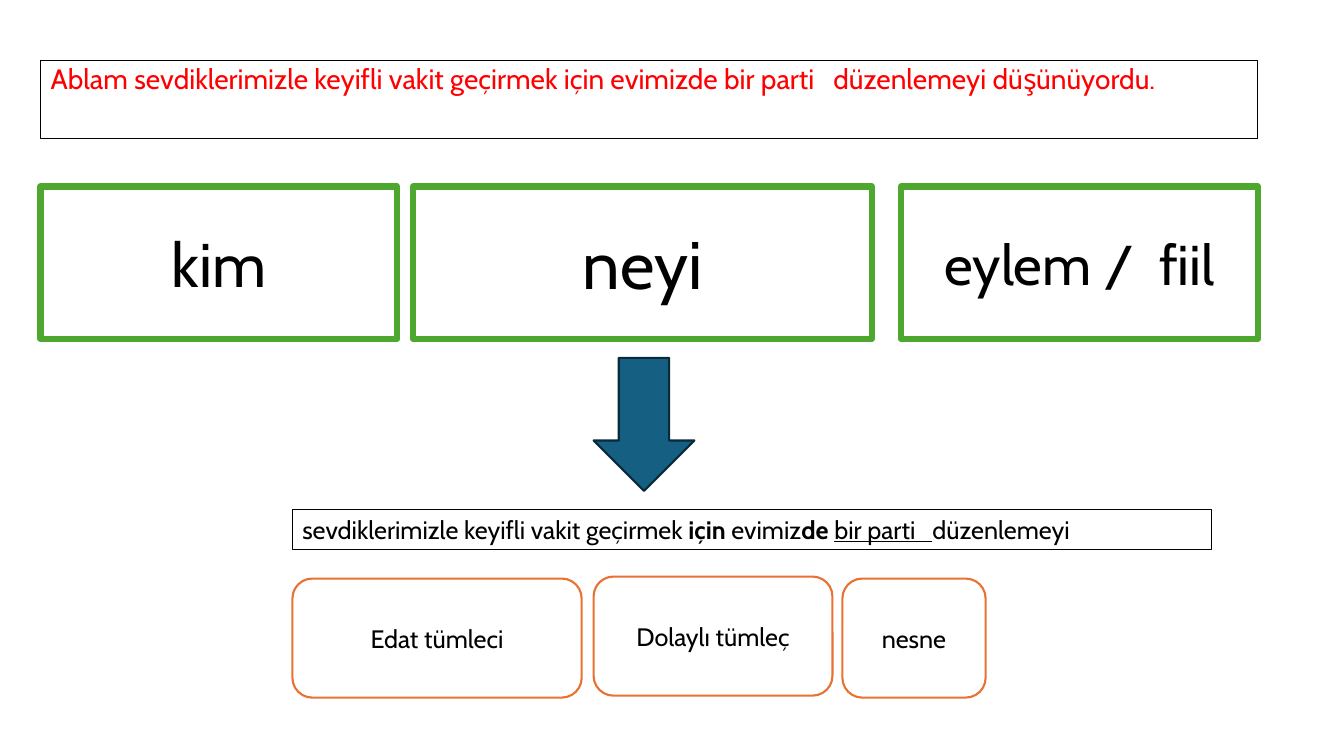
from lxml import etree
from pptx import Presentation
from pptx.dml.color import RGBColor
from pptx.enum import shapes, text
from pptx.oxml.ns import qn
from pptx.util import Cm, Pt

FONT = "Cabin"
COLORS = {
    "white": "FFFFFF", "black": "000000", "red": "FF0000", "green": "4EA72E",
    "orange": "E97132", "blue": "156082", "navy": "092A39",
}

SENTENCE = "Ablam sevdiklerimizle keyifli vakit geçirmek için evimizde bir parti   düzenlemeyi düşünüyordu. "
# text, left, width, font size
QUESTIONS = [
    ("kim", 1.02, 8.99, 44),
    ("neyi", 10.41, 11.56, 48),
    ("eylem /  fiil", 22.71, 8.99, 40),
]
# text, bold, underlined
PHRASE = [
    ("sevdiklerimizle keyifli vakit geçirmek ", False, False),
    ("için", True, False),
    (" evimiz", False, False),
    ("de ", True, False),
    ("bir parti   ", False, True),
    ("düzenlemeyi", False, False),
]
# text, left, top, width
ELEMENTS = [
    ("Edat tümleci", 7.37, 14.58, 7.29),
    ("Dolaylı tümleç", 14.96, 14.53, 6.02),
    ("nesne", 21.23, 14.58, 3.61),
]


def rgb(name):
    return RGBColor.from_string(COLORS[name])


def style_run(run, size, color="black"):
    run.font.name = FONT
    run.font.size = Pt(size)
    run.font.color.rgb = rgb(color)


def outline(shape, color, width):
    shape.line.color.rgb = rgb(color)
    shape.line.width = Pt(width)


def add_box(slide, kind, place, fill, line, width, label="", size=18):
    """Add a filled, outlined shape with a centred label; place is in cm."""
    box = slide.shapes.add_shape(kind, *map(Cm, place))
    box.shadow.inherit = False
    box.fill.solid()
    box.fill.fore_color.rgb = rgb(fill)
    outline(box, line, width)
    if label:
        frame = box.text_frame
        frame.text = label
        frame.vertical_anchor = text.MSO_ANCHOR.MIDDLE
        frame.paragraphs[0].alignment = text.PP_ALIGN.CENTER
        style_run(frame.paragraphs[0].runs[0], size)


def fill_sentence(body):
    body.left, body.top, body.width, body.height = map(Cm, (1.02, 1.52, 30.66, 1.96))
    outline(body, "black", 0.75)
    frame = body.text_frame
    frame.text = SENTENCE
    frame.auto_size = text.MSO_AUTO_SIZE.NONE
    frame.vertical_anchor = text.MSO_ANCHOR.TOP
    paragraph = frame.paragraphs[0]
    paragraph.alignment = text.PP_ALIGN.JUSTIFY
    paragraph.space_before = Pt(10)
    paragraph.line_spacing = 0.9
    properties = paragraph._p.get_or_add_pPr()
    properties.set("marL", str(Cm(0.64)))
    properties.set("indent", str(-Cm(0.64)))
    etree.SubElement(properties, qn("a:buNone"))
    style_run(paragraph.runs[0], 20, "red")


def add_phrase(slide):
    phrase = slide.shapes.add_textbox(*map(Cm, (7.37, 12.83, 23.16, 1.03)))
    outline(phrase, "black", 0.75)
    frame = phrase.text_frame
    frame.word_wrap = True
    frame.auto_size = text.MSO_AUTO_SIZE.SHAPE_TO_FIT_TEXT
    for words, bold, underlined in PHRASE:
        run = frame.paragraphs[0].add_run()
        run.text = words
        style_run(run, 18)
        run.font.bold = bold
        run.font.underline = underlined


def main():
    deck = Presentation()
    deck.slide_width, deck.slide_height = Cm(33.87), Cm(19.05)
    slide = deck.slides.add_slide(deck.slide_layouts[1])
    title = slide.shapes.title
    title.element.getparent().remove(title.element)

    fill_sentence(slide.placeholders[1])
    kinds = shapes.MSO_SHAPE
    for label, left, width, size in QUESTIONS:
        add_box(slide, kinds.RECTANGLE, (left, 4.7, width, 3.84),
                "white", "green", 4.5, label, size)
    add_phrase(slide)
    add_box(slide, kinds.DOWN_ARROW, (14.96, 9.02, 2.54, 3.35), "blue", "navy", 1.5)
    for label, left, top, width in ELEMENTS:
        add_box(slide, kinds.ROUNDED_RECTANGLE, (left, top, width, 3),
                "white", "orange", 1.5, label)
    deck.save("out.pptx")


if __name__ == "__main__":
    main()
